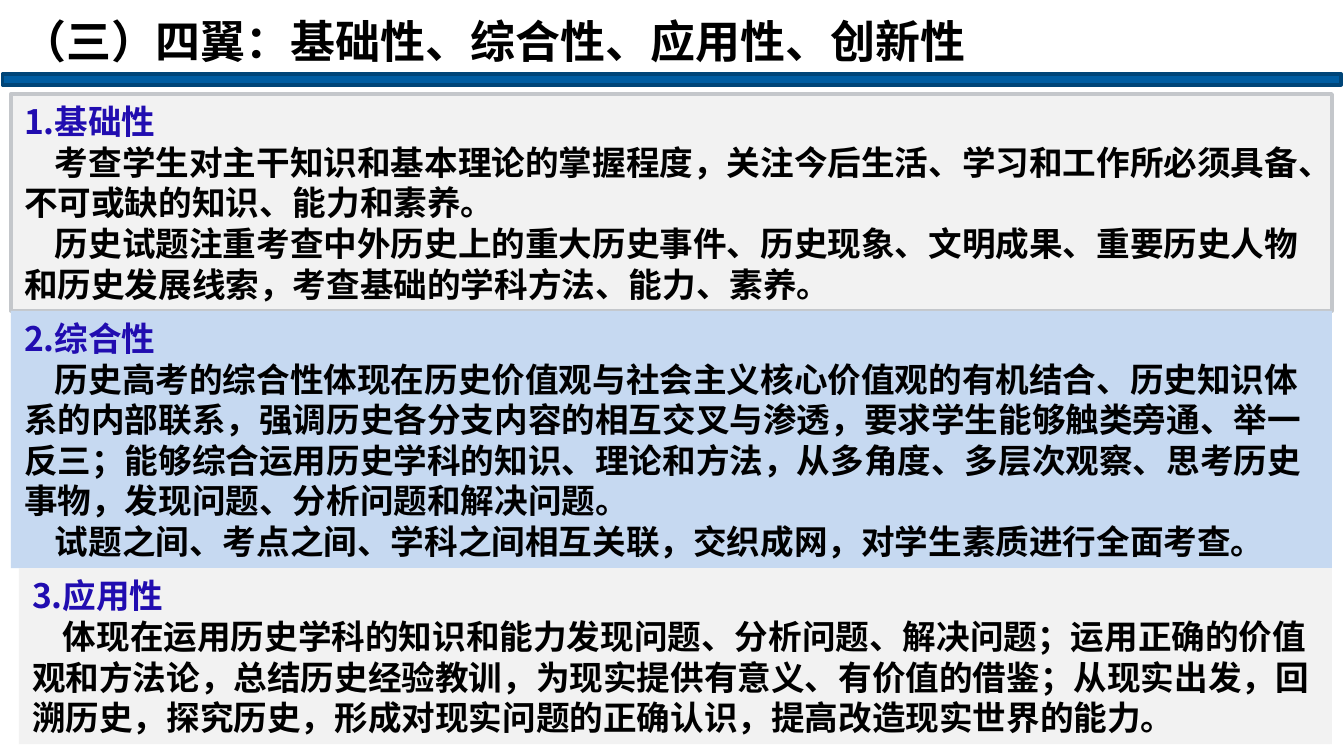
"""Build a slide on the basic, integrated and applied aims of history exams."""
from dataclasses import dataclass

from pptx import Presentation
from pptx.dml.color import RGBColor
from pptx.enum.shapes import MSO_SHAPE
from pptx.enum.text import MSO_ANCHOR, PP_ALIGN
from pptx.oxml.ns import qn
from pptx.util import Pt

RECT = MSO_SHAPE.RECTANGLE
MIDDLE = MSO_ANCHOR.MIDDLE
LEFT, CENTER = PP_ALIGN.LEFT, PP_ALIGN.CENTER


@dataclass(frozen=True)
class Theme:
    ink: str = "000000"
    head: str = "210DB0"
    bar: str = "005DA2"
    edge: str = "004578"
    pale: str = "F2F2F2"
    blue: str = "C6D9F1"
    frame: str = "C4C7CB"
    title: float = 24.1
    body: float = 18
    lead: float = 1.21
    indent: float = 16.5
    inset: float = 3.6
    latin: str = "Calibri"
    asian: str = "Noto Sans CJK SC"


THEME = Theme()
RIGHT = 713.6
TOP = 50.4

PANELS = [
    (5.8, 5, THEME.pale, THEME.frame, "1.基础性", [
        "考查学生对主干知识和基本理论的掌握程度，关注今后生活、学习和工作所必须具备、不可或缺的知识、能力和素养。",
        "历史试题注重考查中外历史上的重大历史事件、历史现象、文明成果、重要历史人物和历史发展线索，考查基础的学科方法、能力、素养。",
    ]),
    (5.8, 6, THEME.blue, None, "2.综合性", [
        "历史高考的综合性体现在历史价值观与社会主义核心价值观的有机结合、历史知识体系的内部联系，"
        "强调历史各分支内容的相互交叉与渗透，要求学生能够触类旁通、举一反三；"
        "能够综合运用历史学科的知识、理论和方法，从多角度、多层次观察、思考历史事物，发现问题、分析问题和解决问题。",
        "试题之间、考点之间、学科之间相互关联，交织成网，对学生素质进行全面考查。",
    ]),
    (10.1, 4, THEME.pale, None, "3.应用性", [
        "体现在运用历史学科的知识和能力发现问题、分析问题、解决问题；"
        "运用正确的价值观和方法论，总结历史经验教训，为现实提供有意义、有价值的借鉴；"
        "从现实出发，回溯历史，探究历史，形成对现实问题的正确认识，提高改造现实世界的能力。",
    ]),
]


def add_text(para, text, size=THEME.body, color=THEME.ink,
             font=THEME.asian, align=LEFT, indent=0):
    para.alignment = align
    para.line_spacing = Pt(size * THEME.lead)
    if indent:
        para._p.get_or_add_pPr().set("indent", str(Pt(indent)))
    run = para.add_run()
    run.text = text
    run.font.size = Pt(size)
    run.font.bold = True
    run.font.name = font
    run.font.color.rgb = RGBColor.from_string(color)
    asian = run._r.get_or_add_rPr().makeelement(
        qn("a:ea"), {"typeface": THEME.asian})
    run.font._element.find(qn("a:latin")).addnext(asian)


def set_frame(frame):
    frame.word_wrap = True
    frame.vertical_anchor = MIDDLE
    frame.margin_top = frame.margin_bottom = Pt(THEME.inset)


def add_rect(slide, left, top, width, height, fill, line=None):
    rect = slide.shapes.add_shape(
        RECT, Pt(left), Pt(top), Pt(width), Pt(height))
    rect.shadow.inherit = False
    rect.fill.solid()
    rect.fill.fore_color.rgb = RGBColor.from_string(fill)
    if line:
        rect.line.color.rgb = RGBColor.from_string(line)
        rect.line.width = Pt(2)
    else:
        rect.line.fill.background()
    return rect


def add_title(slide, text):
    box = slide.shapes.add_textbox(Pt(1.4), Pt(3.6), Pt(526.3), Pt(36))
    set_frame(box.text_frame)
    add_text(box.text_frame.paragraphs[0], text, size=THEME.title,
             font=THEME.latin, align=CENTER)


def add_panel(slide, left, top, height, fill, line, head, paras):
    rect = add_rect(slide, left, top, RIGHT - left, height, fill, line)
    frame = rect.text_frame
    set_frame(frame)
    add_text(frame.paragraphs[0], head, color=THEME.head)
    for text in paras:
        add_text(frame.add_paragraph(), text, indent=THEME.indent)


def main():
    deck = Presentation()
    deck.slide_width, deck.slide_height = Pt(720), Pt(405)
    slide = deck.slides.add_slide(deck.slide_layouts[6])
    add_rect(slide, 1.4, 39.6, 717.1, 5.8, THEME.bar, THEME.edge)
    add_title(slide, "（三）四翼：基础性、综合性、应用性、创新性")
    top = TOP
    for left, rows, fill, line, head, paras in PANELS:
        height = rows * THEME.body * THEME.lead + 2 * THEME.inset
        add_panel(slide, left, top, height, fill, line, head, paras)
        top += height
    deck.save("out.pptx")


if __name__ == "__main__":
    main()
